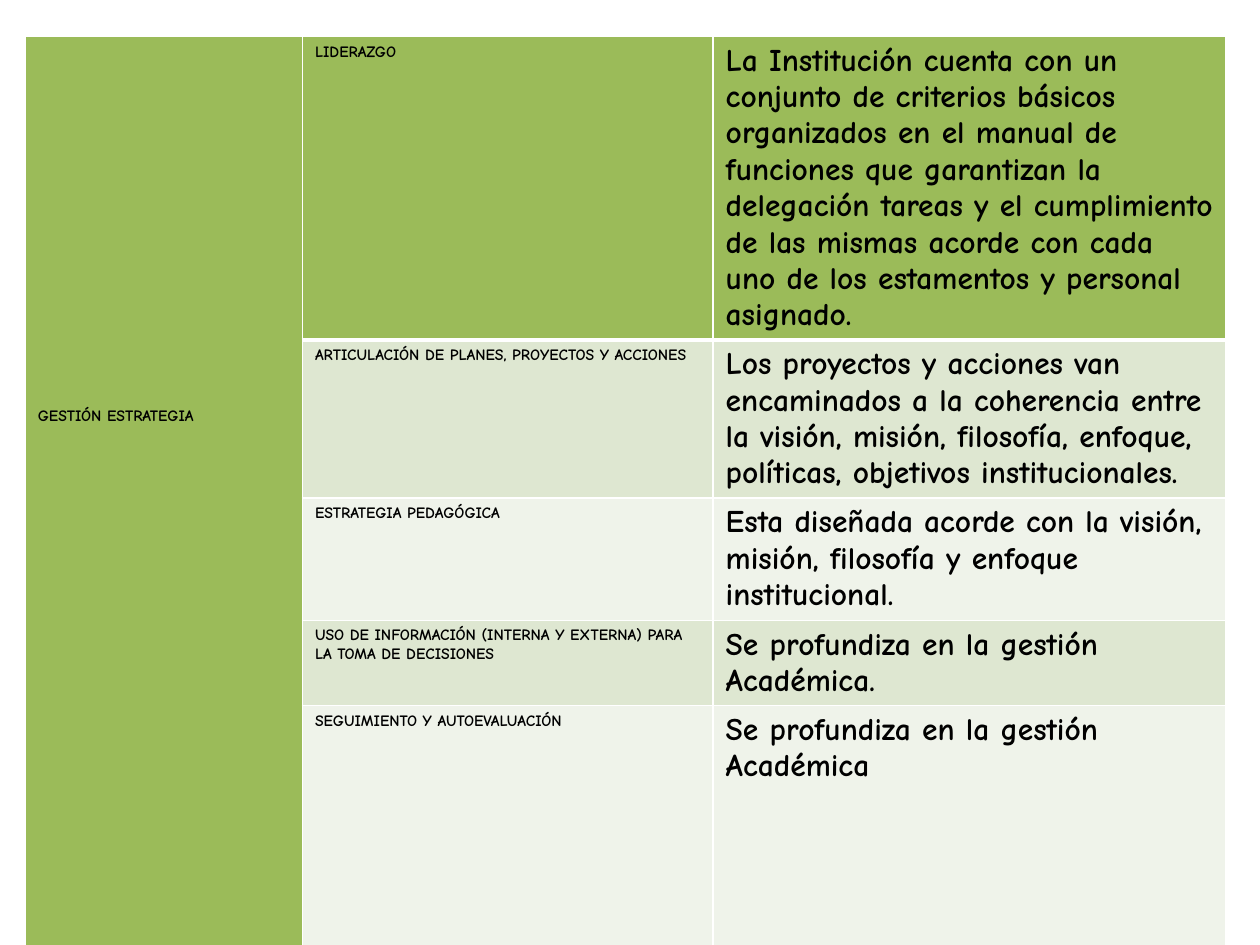
from lxml import etree
from pptx import Presentation
from pptx import util as u
from pptx.dml.color import RGBColor
from pptx.oxml import ns

BLACK = RGBColor(0x00, 0x00, 0x00)
WHITE = RGBColor(0xFF, 0xFF, 0xFF)
GREEN = RGBColor(0x9B, 0xBB, 0x59)
BAND = RGBColor(0xDE, 0xE7, 0xD1)
PALE = RGBColor(0xEF, 0xF3, 0xEA)

AREA = "GESTIÓN ESTRATEGIA"
COLUMN_WIDTHS = [2.2, 3.26, 4.07]
PROCESSES = [
    (2.4, GREEN, "LIDERAZGO",
     "La Institución cuenta con un conjunto de criterios básicos organizados "
     "en el manual de funciones que garantizan la delegación tareas y el "
     "cumplimiento de las mismas acorde con cada uno de los estamentos y "
     "personal asignado."),
    (1.25, BAND, "ARTICULACIÓN DE PLANES, PROYECTOS Y ACCIONES",
     "Los proyectos y acciones van encaminados a la coherencia entre la "
     "visión, misión, filosofía, enfoque, políticas, objetivos "
     "institucionales."),
    (0.97, PALE, "ESTRATEGIA PEDAGÓGICA",
     "Esta diseñada acorde con la visión, misión, filosofía y enfoque "
     "institucional."),
    (0.67, BAND,
     "USO DE INFORMACIÓN (INTERNA Y EXTERNA) PARA LA TOMA DE DECISIONES",
     "Se profundiza en la gestión Académica."),
    (1.92, PALE, "SEGUIMIENTO Y AUTOEVALUACIÓN",
     "Se profundiza en la gestión Académica"),
]


class TablePage:
    """Holds the text style and the current slide, and draws its table."""

    font_name = "Comic Neue"
    label_size = 9
    body_size = 18

    def __init__(self, deck):
        self.page = deck.slides.add_slide(deck.slide_layouts[6])

    def table(self, left, top, widths, heights):
        frame = self.page.shapes.add_table(
            len(heights), len(widths), u.Inches(left), u.Inches(top),
            u.Inches(sum(widths)), u.Inches(sum(heights)))
        table = frame.table
        for column, width in zip(table.columns, widths):
            column.width = u.Inches(width)
        for row, height in zip(table.rows, heights):
            row.height = u.Inches(height)
        return table

    def borders(self, cell, bottom):
        properties = cell._tc.get_or_add_tcPr()
        for side, points in (("L", 1), ("R", 1), ("T", 1), ("B", bottom)):
            line = etree.SubElement(properties, ns.qn(f"a:ln{side}"),
                                    w=str(u.Pt(points)))
            fill = etree.SubElement(line, ns.qn("a:solidFill"))
            etree.SubElement(fill, ns.qn("a:srgbClr"), val=str(WHITE))

    def cell(self, cell, color, bottom=1):
        self.borders(cell, bottom)
        cell.fill.solid()
        cell.fill.fore_color.rgb = color

    def label(self, cell, wording, size):
        span = cell.text_frame.paragraphs[0].add_run()
        span.text = wording
        span.font.name = self.font_name
        span.font.size = u.Pt(size)
        span.font.bold = True
        span.font.color.rgb = BLACK


def main():
    deck = Presentation()
    deck.slide_width, deck.slide_height = u.Inches(10), u.Inches(7.5)
    page = TablePage(deck)
    table = page.table(0.2, 0.29, COLUMN_WIDTHS,
                       [process[0] for process in PROCESSES])

    for row, (_, color, name, description) in enumerate(PROCESSES):
        bottom = 3 if row == 0 else 1
        for column, fill in enumerate((GREEN, color, color)):
            page.cell(table.cell(row, column), fill, bottom)
        page.label(table.cell(row, 1), name, page.label_size)
        page.label(table.cell(row, 2), description, page.body_size)

    area = table.cell(0, 0)
    area.merge(table.cell(len(PROCESSES) - 1, 0))
    area.margin_top = u.Inches(2.94)
    page.label(area, AREA, page.label_size)
    deck.save("out.pptx")


if __name__ == "__main__":
    main()
